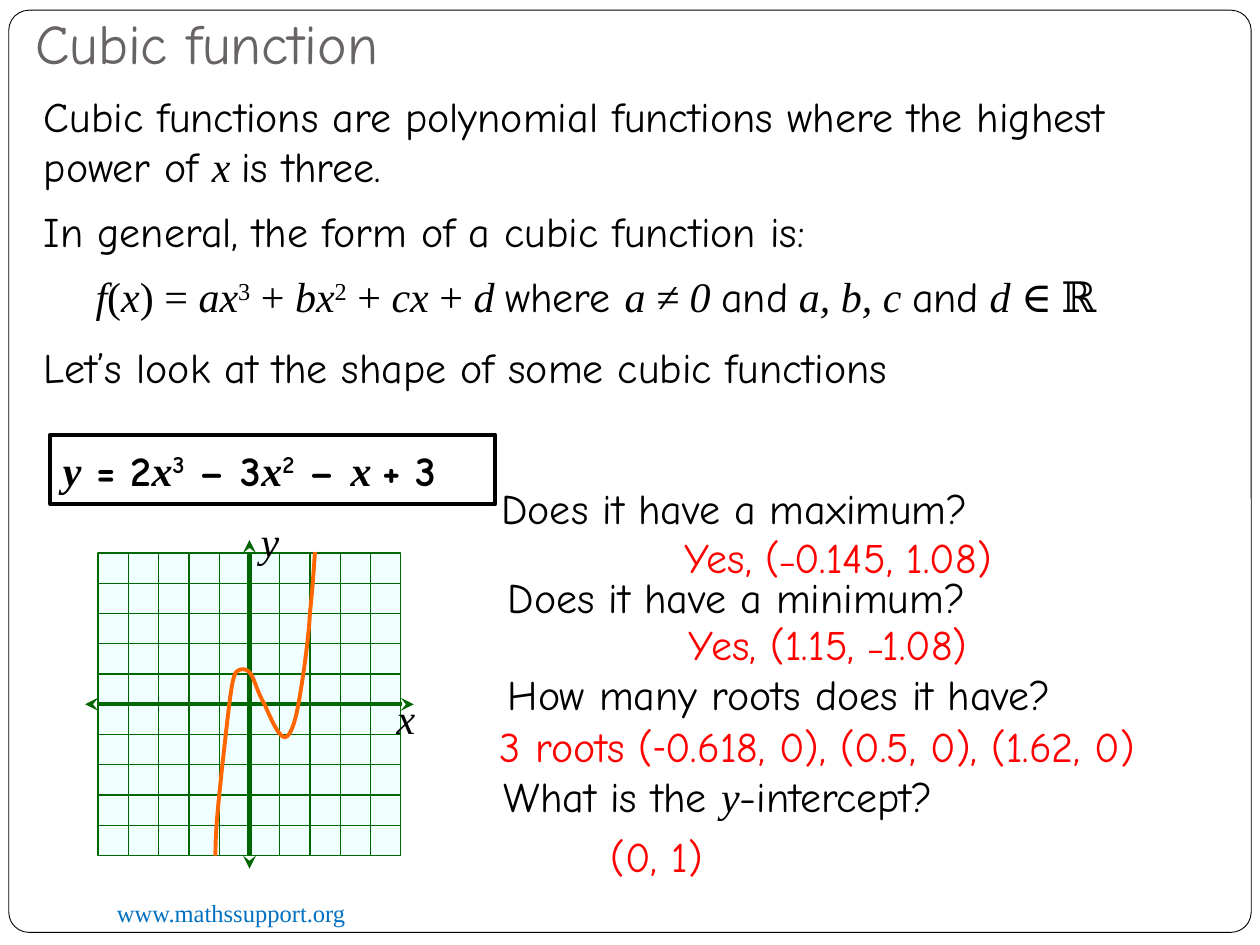
"""Build a slide on the shape and key features of a cubic function."""
from typing import NamedTuple

from lxml import etree
from pptx import Presentation
from pptx.dml.color import RGBColor
from pptx.enum.shapes import MSO_CONNECTOR, MSO_SHAPE
from pptx.enum.text import MSO_ANCHOR, MSO_AUTO_SIZE, PP_ALIGN
from pptx.oxml.ns import qn
from pptx.shapes.autoshape import Shape
from pptx.shapes.shapetree import SlideShapes
from pptx.text.text import TextFrame
from pptx.util import Pt

STRAIGHT = MSO_CONNECTOR.STRAIGHT
RECTANGLE, ROUNDED = MSO_SHAPE.RECTANGLE, MSO_SHAPE.ROUNDED_RECTANGLE
MIDDLE, BOTTOM, TOP = MSO_ANCHOR.MIDDLE, MSO_ANCHOR.BOTTOM, MSO_ANCHOR.TOP
GROW, FIXED = MSO_AUTO_SIZE.SHAPE_TO_FIT_TEXT, MSO_AUTO_SIZE.NONE
LEFT = PP_ALIGN.LEFT

BLACK = RGBColor(0x00, 0x00, 0x00)
WHITE = RGBColor(0xFF, 0xFF, 0xFF)
GRAY = RGBColor(0x69, 0x64, 0x64)
BLUE = RGBColor(0x00, 0x70, 0xC0)
RED = RGBColor(0xFF, 0x00, 0x00)
GREEN = RGBColor(0x00, 0x66, 0x00)
ORANGE = RGBColor(0xFF, 0x66, 0x00)
PALE = RGBColor(0xF0, 0xFF, 0xFF)

COMIC, TIMES, CAMBRIA = "Comic Neue", "Times New Roman", "Cambria"

GRID_LEFT, GRID_TOP, CELL, CELLS = 56.16, 316.08, 17.28, 10
GRID_SIZE = CELL * CELLS
AXIS_OVERHANG = 7.5
CURVE_STEPS = 12

Point = tuple[float, float]


class Run(NamedTuple):
    text: str
    font: str = COMIC
    italic: bool = False
    superscript: bool = False


class Label(NamedTuple):
    left: float
    top: float
    width: float
    runs: list[Run]
    color: RGBColor = BLACK
    size: float = 24
    height: float = 36
    anchor: MSO_ANCHOR = TOP
    auto_size: MSO_AUTO_SIZE = GROW
    bottom_inset: float = 3.6


def math(text: str) -> Run:
    """Return an italic serif run."""
    return Run(text, TIMES, italic=True)


def serif(text: str, superscript: bool = False) -> Run:
    """Return an upright serif run."""
    return Run(text, TIMES, superscript=superscript)


def power(text: str) -> Run:
    """Return a superscript run in the body font."""
    return Run(text, superscript=True)


LABELS = [
    Label(59.76, 509.8, 234, [serif("www.mathssupport.org")], BLUE, 14, 24.5),
    Label(18, 48.2, 684, [Run("Cubic functions are polynomial functions where the highest power of "),
                          math("x "), Run("is three.")], height=65.5),
    Label(18, 113.8, 624, [Run("In general, the form of a cubic function is:")]),
    Label(13, 10.8, 648, [Run("Cubic function")], GRAY, 32, 39.6, BOTTOM, FIXED, 7.2),
    Label(47.5, 151.2, 624, [
        math("f"), serif("("), math("x"), serif(") = "), math("ax"), serif("3", True),
        serif(" + "), math("bx"), serif("2", True), serif(" + "), math("cx"), serif(" + "),
        math("d "), Run("where "), math("a ≠ 0 "), Run("and"), math(" a, b, c "),
        Run("and"), math(" d "), Run("∈ ℝ", CAMBRIA)]),
    Label(18, 191.5, 569, [Run("Let’s look at the shape of some cubic functions")]),
    Label(279.4, 272.2, 336, [Run("Does it have a maximum?")]),
    Label(283, 323.3, 336, [Run("Does it have a minimum?")]),
    Label(280.8, 437, 336, [Run("What is the "), math("y"), Run("-intercept?")]),
    Label(283, 378.7, 351.4, [Run("How many roots does it have?")]),
    Label(383.8, 300.2, 245.5, [Run("Yes, ("), serif("˗"), Run("0.145, 1.08)")], RED),
    Label(386.6, 349.9, 200.2, [Run("Yes, (1.15, "), serif("˗"), Run("1.08)")], RED),
    Label(278.6, 408.2, 434.2, [Run("3 roots (˗0.618, 0), (0.5, 0), (1.62, 0)")], RED),
    Label(342, 470.9, 200.2, [Run("(0, 1)")], RED),
]
AXIS_NAMES = [Label(141.8, 290.9, 27.4, [math("y")]), Label(219.6, 392.4, 27.4, [math("x")])]

FORMULA = [math("y"), Run(" = 2"), math("x"), power("3"), Run(" – 3"), math("x"),
           power("2"), Run(" – "), math("x "), Run("+ 3")]

CURVE_START = (123.1, 488.9)
CURVE = [
    ((123.1, 478.8), (123.8, 468.7), (125.3, 454.3)),
    ((126.7, 439.9), (129.6, 414), (131, 402.5)),
    ((132.5, 391), (133.2, 387.4), (134.6, 384.5)),
    ((136.8, 381.6), (141.1, 381.6), (143.3, 385.2)),
    ((145.4, 388.1), (147.6, 396.7), (151.2, 402.5)),
    ((154.1, 409), (159.1, 421.2), (162.7, 421.2)),
    ((165.6, 421.2), (168.5, 414), (170.6, 401.8)),
    ((172.8, 390.2), (176.4, 365), (177.1, 350.6)),
    ((178.6, 336.2), (179.3, 325.4), (180, 315.4)),
]


def write_runs(frame: TextFrame, runs: list[Run], size: float, color: RGBColor,
               bold: bool = False) -> None:
    """Fill the first paragraph, setting shared font traits on the paragraph."""
    paragraph = frame.paragraphs[0]
    paragraph.alignment = LEFT
    font = paragraph.font
    font.size, font.bold, font.color.rgb = Pt(size), bold, color
    same_font = len({(run.font, run.italic) for run in runs}) == 1
    if same_font:
        font.name, font.italic = runs[0].font, runs[0].italic
    for item in runs:
        run = paragraph.add_run()
        run.text = item.text
        if not same_font:
            run.font.name, run.font.italic = item.font, item.italic
        if item.superscript:
            run.font._element.set("baseline", "30000")


def add_label(shapes: SlideShapes, label: Label) -> None:
    """Add one wrapped text box."""
    frame = shapes.add_textbox(Pt(label.left), Pt(label.top), Pt(label.width),
                               Pt(label.height)).text_frame
    frame.word_wrap, frame.auto_size = True, label.auto_size
    frame.vertical_anchor = label.anchor
    frame.margin_bottom = Pt(label.bottom_inset)
    write_runs(frame, label.runs, label.size, label.color)


def add_box(shapes: SlideShapes, kind: MSO_SHAPE, left: float, top: float, width: float,
            height: float, fill: RGBColor, line: RGBColor, weight: float) -> Shape:
    """Add a filled, outlined preset shape."""
    shape = shapes.add_shape(kind, Pt(left), Pt(top), Pt(width), Pt(height))
    shape.shadow.inherit = False
    shape.fill.solid()
    shape.fill.fore_color.rgb = fill
    shape.line.color.rgb, shape.line.width = line, Pt(weight)
    return shape


def add_line(shapes: SlideShapes, start: Point, end: Point, axis: bool = False) -> None:
    """Add a grid line, or an axis with arrowheads at both ends."""
    line = shapes.add_connector(STRAIGHT, *(Pt(value) for value in start + end))
    line.line.color.rgb, line.line.width = GREEN, Pt(2.5 if axis else 0.75)
    properties = line._element.spPr
    if axis:
        outline = properties.find(qn("a:ln"))
        for tag in ("a:headEnd", "a:tailEnd"):
            etree.SubElement(outline, qn(tag), type="stealth")
    etree.SubElement(properties, qn("a:effectLst"))


def add_grid(shapes: SlideShapes) -> None:
    """Add the coordinate grid with its axes through the middle."""
    add_box(shapes, RECTANGLE, GRID_LEFT, GRID_TOP, GRID_SIZE, GRID_SIZE, PALE, GREEN, 1)
    for index in range(1, CELLS):
        axis = index == CELLS // 2
        reach = AXIS_OVERHANG if axis else 0
        x, y = GRID_LEFT + index * CELL, GRID_TOP + index * CELL
        add_line(shapes, (GRID_LEFT - reach, y), (GRID_LEFT + GRID_SIZE + reach, y), axis)
        add_line(shapes, (x, GRID_TOP - reach), (x, GRID_TOP + GRID_SIZE + reach), axis)


def bezier(points: tuple[Point, ...], t: float) -> Point:
    """Return the point at t on a cubic Bézier segment."""
    weights = ((1 - t) ** 3, 3 * t * (1 - t) ** 2, 3 * t * t * (1 - t), t ** 3)
    x, y = (sum(w * v for w, v in zip(weights, values)) for values in zip(*points))
    return Pt(x), Pt(y)


def add_curve(shapes: SlideShapes) -> None:
    """Add the graph of the cubic."""
    builder = shapes.build_freeform(Pt(CURVE_START[0]), Pt(CURVE_START[1]))
    start = CURVE_START
    for segment in CURVE:
        builder.add_line_segments([bezier((start, *segment), step / CURVE_STEPS)
                                   for step in range(1, CURVE_STEPS + 1)], close=False)
        start = segment[-1]
    curve = builder.convert_to_shape()
    curve.shadow.inherit = False
    curve.fill.background()
    curve.line.color.rgb, curve.line.width = ORANGE, Pt(2.25)


def main() -> None:
    """Build and save the presentation."""
    presentation = Presentation()
    presentation.slide_width, presentation.slide_height = Pt(720), Pt(540)
    shapes = presentation.slides.add_slide(presentation.slide_layouts[6]).shapes
    border = add_box(shapes, ROUNDED, 5, 5.8, 710, 527, WHITE, BLACK, 0.5)
    border.adjustments[0] = 0.022
    formula = add_box(shapes, RECTANGLE, 28.8, 248.4, 254.2, 39.6, WHITE, BLACK, 2.25)
    formula.text_frame.word_wrap = False
    formula.text_frame.vertical_anchor = MIDDLE
    write_runs(formula.text_frame, FORMULA, 24, BLACK, bold=True)
    for label in LABELS:
        add_label(shapes, label)
    add_grid(shapes)
    for label in AXIS_NAMES:
        add_label(shapes, label)
    add_curve(shapes)
    presentation.save("out.pptx")


if __name__ == "__main__":
    main()
